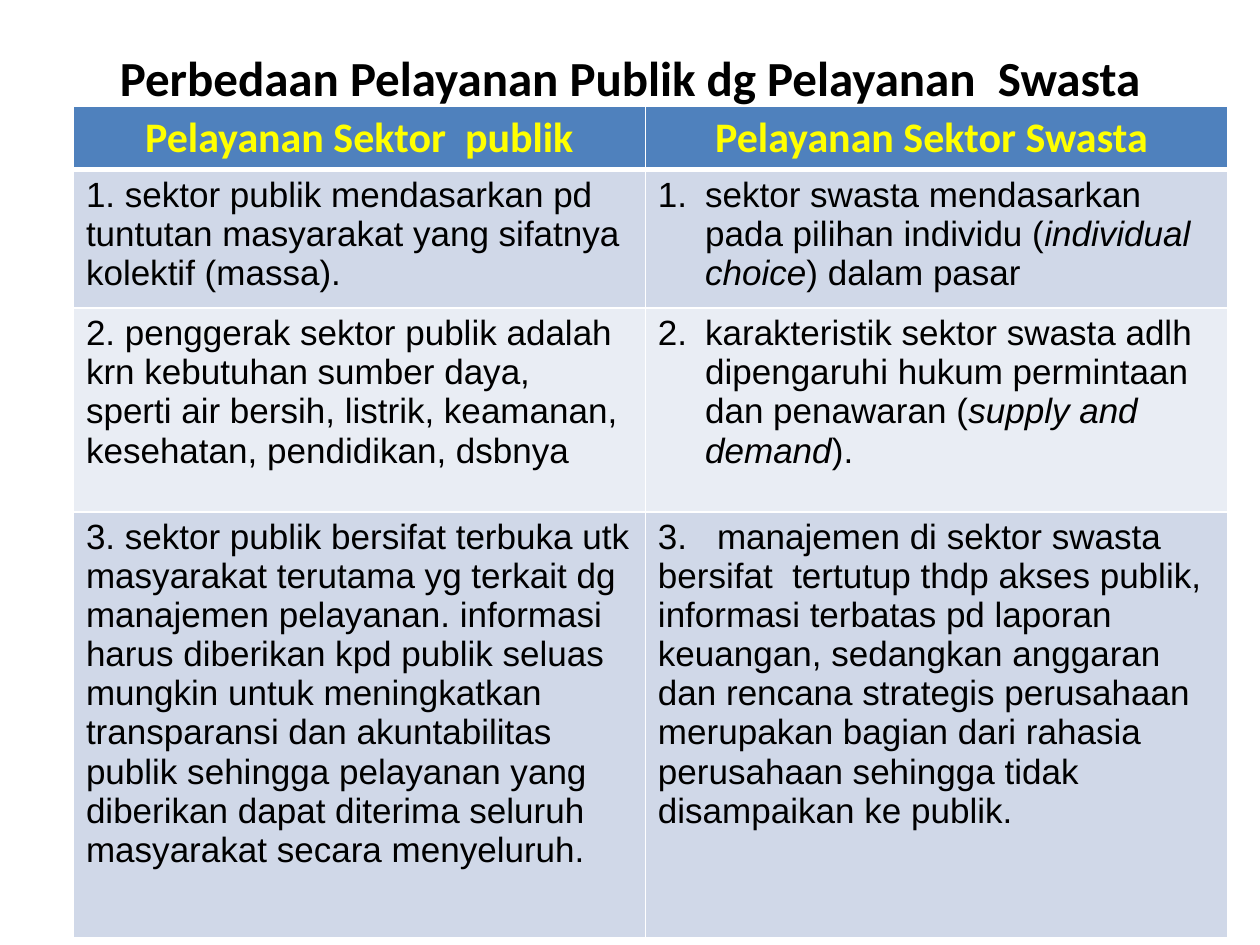
from lxml import etree
from pptx import Presentation
from pptx.dml.color import RGBColor
from pptx.enum.text import MSO_ANCHOR, PP_ALIGN
from pptx.oxml.ns import qn
from pptx.util import Cm, Pt

CENTER, LEFT = PP_ALIGN.CENTER, PP_ALIGN.LEFT
MIDDLE = MSO_ANCHOR.MIDDLE
BLANK_LAYOUT = 6

TITLE = "Perbedaan Pelayanan Publik dg Pelayanan  Swasta"
HEADINGS = ["Pelayanan Sektor  publik", "Pelayanan Sektor Swasta "]
COLUMN_WIDTHS = [11.53, 11.73]
ROW_HEIGHTS = [1.24, 2.74, 4.11, 8.59]
BAND_FILLS = ["D0D8E8", "E9EDF4"]

# Each cell: runs as (text, italic), and the automatic number if it has one.
COMPARISON = [
    [
        ([("1. sektor publik mendasarkan pd tuntutan masyarakat yang sifatnya "
           "kolektif (massa).", False)], None),
        ([("sektor swasta mendasarkan pada pilihan individu (", False),
          ("individual choice", True),
          (") dalam pasar", False)], 1),
    ],
    [
        ([("2. penggerak sektor publik adalah krn kebutuhan sumber daya,  sperti "
           "air bersih, listrik, keamanan, kesehatan, pendidikan, dsbnya", False)], None),
        ([("karakteristik sektor swasta adlh dipengaruhi hukum permintaan dan "
           "penawaran (", False),
          ("supply and demand", True),
          (").", False)], 2),
    ],
    [
        ([("3. sektor publik bersifat terbuka utk masyarakat terutama yg terkait dg "
           "manajemen pelayanan. informasi harus diberikan kpd publik seluas mungkin "
           "untuk meningkatkan transparansi dan akuntabilitas publik sehingga "
           "pelayanan yang diberikan dapat diterima seluruh masyarakat secara "
           "menyeluruh.", False)], None),
        ([("3.\tmanajemen di sektor swasta bersifat  tertutup thdp akses publik, "
           "informasi terbatas pd laporan keuangan, sedangkan anggaran dan rencana "
           "strategis perusahaan merupakan bagian dari rahasia perusahaan sehingga "
           "tidak disampaikan ke publik.", False)], None),
    ],
]


def color(hex_value):
    return RGBColor.from_string(hex_value)


class ComparisonSlide:
    heading_font, body_font = "Calibri", "Arial"
    text_color, heading_color = "000000", "FFFF00"
    heading_fill, border_color = "4F81BD", "FFFFFF"
    number_indent, tab_stop = Cm(0.95), Cm(1.19)

    def __init__(self, presentation):
        self.slide = presentation.slides.add_slide(
            presentation.slide_layouts[BLANK_LAYOUT])

    def add_run(self, paragraph, text, font, size, hex_value, bold=False, italic=False):
        run = paragraph.add_run()
        run.text = text
        run.font.name = font
        run.font.size = Pt(size)
        run.font.bold = bold
        run.font.italic = italic
        run.font.color.rgb = color(hex_value)

    def add_title(self, text, left, top, width, height):
        frame = self.slide.shapes.add_textbox(left, top, width, height).text_frame
        frame.word_wrap = True
        frame.vertical_anchor = MIDDLE
        paragraph = frame.paragraphs[0]
        paragraph.alignment = CENTER
        self.add_run(paragraph, text, self.heading_font, 28, self.text_color, bold=True)

    def number_paragraph(self, paragraph, number):
        """Give the paragraph a hanging automatic number."""
        properties = paragraph._p.get_or_add_pPr()
        properties.set("marL", str(self.number_indent))
        properties.set("indent", str(-self.number_indent))
        bullet = etree.SubElement(properties, qn("a:buAutoNum"), type="arabicPeriod")
        if number > 1:
            bullet.set("startAt", str(number))

    def add_tab_stop(self, paragraph):
        tabs = etree.SubElement(paragraph._p.get_or_add_pPr(), qn("a:tabLst"))
        etree.SubElement(tabs, qn("a:tab"), pos=str(self.tab_stop), algn="l")

    def style_cell(self, cell, fill, bottom_width=1):
        """Set the borders first, then the fill, as the schema orders them."""
        properties = cell._tc.get_or_add_tcPr()
        for side, width in zip("LRTB", (1, 1, 1, bottom_width)):
            line = etree.SubElement(properties, qn(f"a:ln{side}"), w=str(Pt(width)))
            solid = etree.SubElement(line, qn("a:solidFill"))
            etree.SubElement(solid, qn("a:srgbClr"), val=self.border_color)
        cell.fill.solid()
        cell.fill.fore_color.rgb = color(fill)

    def fill_heading(self, cell, text):
        self.style_cell(cell, self.heading_fill, bottom_width=3)
        paragraph = cell.text_frame.paragraphs[0]
        paragraph.alignment = CENTER
        self.add_run(paragraph, text, self.heading_font, 24, self.heading_color, bold=True)

    def fill_body(self, cell, runs, number, fill):
        self.style_cell(cell, fill)
        paragraph = cell.text_frame.paragraphs[0]
        paragraph.alignment = LEFT
        if number:
            self.number_paragraph(paragraph, number)
        if "\t" in runs[0][0]:
            self.add_tab_stop(paragraph)
        for text, italic in runs:
            self.add_run(paragraph, text, self.body_font, 20, self.text_color, italic=italic)

    def add_comparison(self, left, top):
        table = self.slide.shapes.add_table(
            len(ROW_HEIGHTS), len(COLUMN_WIDTHS), left, top,
            Cm(sum(COLUMN_WIDTHS)), Cm(sum(ROW_HEIGHTS))).table
        for column, width in zip(table.columns, COLUMN_WIDTHS):
            column.width = Cm(width)
        for row, height in zip(table.rows, ROW_HEIGHTS):
            row.height = Cm(height)
        for index, heading in enumerate(HEADINGS):
            self.fill_heading(table.cell(0, index), heading)
        for row_index, row in enumerate(COMPARISON):
            fill = BAND_FILLS[row_index % 2]
            for column_index, (runs, number) in enumerate(row):
                self.fill_body(table.cell(row_index + 1, column_index), runs, number, fill)


def main():
    presentation = Presentation()
    presentation.slide_width = Cm(25.4)
    presentation.slide_height = Cm(19.05)
    slide = ComparisonSlide(presentation)
    slide.add_title(TITLE, Cm(1.27), Cm(0.76), Cm(22.86), Cm(1.57))
    slide.add_comparison(Cm(1.48), Cm(2.14))
    presentation.save("out.pptx")


if __name__ == "__main__":
    main()
